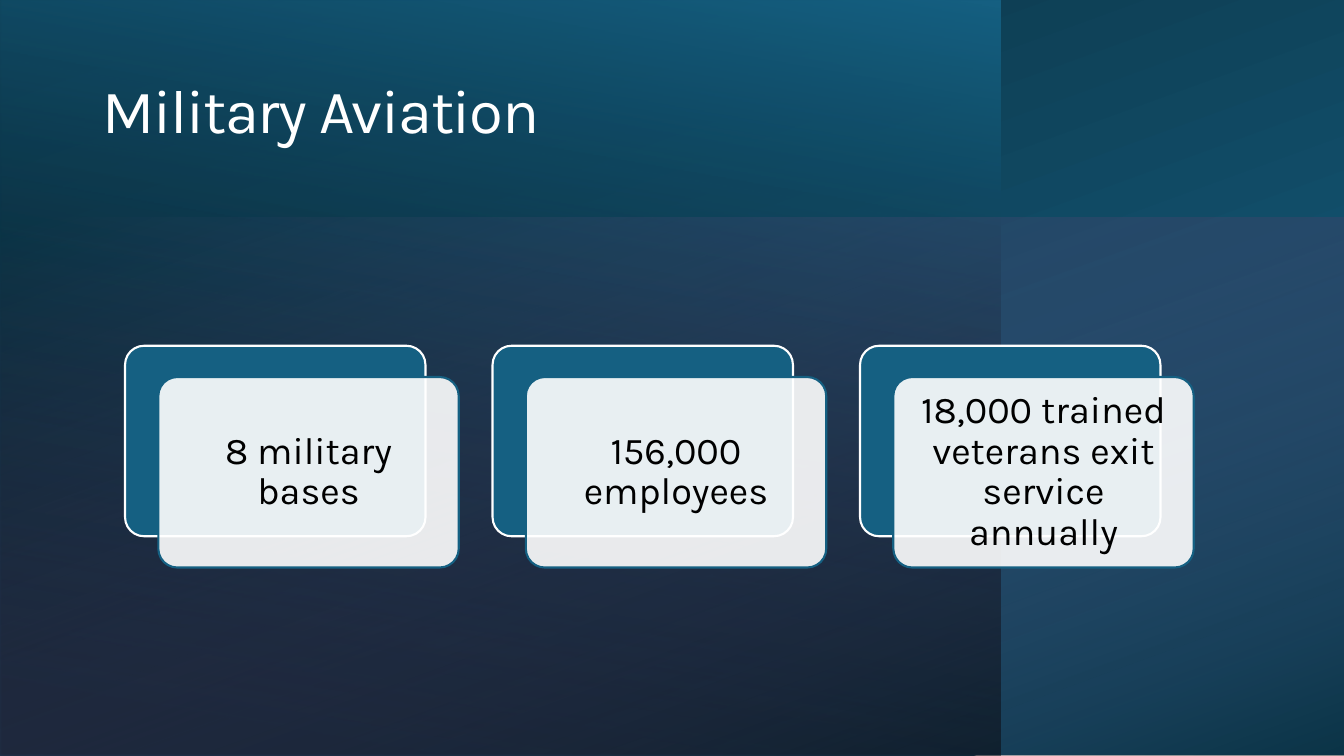
from lxml import etree
from pptx import Presentation
from pptx.dml.color import RGBColor
from pptx.enum.shapes import MSO_SHAPE as Preset
from pptx.enum.text import MSO_ANCHOR as Anchor, PP_ALIGN as Align
from pptx.oxml.ns import qn
from pptx.util import Inches, Pt

COLORS = {
    "teal": "156082",
    "deep_teal": "0B3041",
    "orchid": "D86ECC",
    "black": "000000",
    "white": "FFFFFF",
}
FONT = "Karla"

# Box (left, top, width, height), rotation, angle, stops (position, color, opacity)
BACKDROP = [
    ((2.92, -2.92, 7.5, 13.33), 270, 200, [(8, "teal", 100), (100, "deep_teal", 100)]),
    ((0, 0, 9.92, 7.5), 180, 80, [(8, "black", 52), (100, "teal", 100)]),
    ((3.99, -1.84, 5.35, 13.34), 270, 20, [(0, "orchid", 0), (100, "black", 46)]),
]

FACTS = [
    "8 military bases",
    "156,000 employees",
    "18,000 trained veterans exit service annually",
]
CARD_LEFT, CARD_TOP, CARD_PITCH = 1.24, 3.43, 3.645
CARD_SIZE = (2.98, 1.89)
FRONT_SHIFT = (0.33, 0.31)
CARD_INSET = 0.17


def rgb(name):
    return RGBColor.from_string(COLORS[name])


def set_opacity(color_element, percent):
    if percent < 100:
        alpha = etree.SubElement(color_element, qn("a:alpha"))
        alpha.set("val", str(percent * 1000))


def add_panel(slide, box, rotation, angle, stops):
    """Add a mirrored rectangle with a two-stop gradient; angle runs clockwise."""
    panel = slide.shapes.add_shape(Preset.RECTANGLE, *map(Inches, box))
    panel.shadow.inherit = False
    panel.rotation = rotation
    panel.element.spPr.find(qn("a:xfrm")).set("flipH", "1")
    panel.line.fill.background()
    panel.fill.gradient()
    panel.fill.gradient_angle = 360 - angle
    for stop, (position, color, _) in zip(panel.fill.gradient_stops, stops):
        stop.position = position / 100
        stop.color.rgb = rgb(color)
    color_elements = list(panel.element.spPr.iter(qn("a:srgbClr")))
    for color_element, (_, _, opacity) in zip(color_elements, stops):
        set_opacity(color_element, opacity)


def add_rounded_box(slide, left, top, fill, line, opacity=100):
    box = slide.shapes.add_shape(
        Preset.ROUNDED_RECTANGLE, *map(Inches, (left, top, *CARD_SIZE))
    )
    box.adjustments[0] = 0.1
    box.shadow.inherit = False
    box.fill.solid()
    box.fill.fore_color.rgb = rgb(fill)
    set_opacity(box.element.spPr.find(".//" + qn("a:srgbClr")), opacity)
    box.line.color.rgb = rgb(line)
    box.line.width = Pt(1.5)
    return box


def write_text(shape, text, size, color, align, spacing=None):
    frame = shape.text_frame
    frame.word_wrap = True
    frame.vertical_anchor = Anchor.MIDDLE
    paragraph = frame.paragraphs[0]
    paragraph.alignment = align
    paragraph.line_spacing = 0.9
    run = paragraph.add_run()
    run.text = text
    for name, value in {"name": FONT, "size": Pt(size)}.items():
        setattr(run.font, name, value)
    run.font.color.rgb = rgb(color)
    if spacing is not None:
        run.font.element.set("spc", str(spacing)) if hasattr(
            run.font, "element"
        ) else paragraph.runs[0]._r.get_or_add_rPr().set("spc", str(spacing))


def add_fact_card(slide, left, text):
    add_rounded_box(slide, left, CARD_TOP, "teal", "white")
    shift_x, shift_y = FRONT_SHIFT
    front = add_rounded_box(
        slide, left + shift_x, CARD_TOP + shift_y, "white", "teal", opacity=90
    )
    for side in ("left", "top", "right", "bottom"):
        setattr(front.text_frame, f"margin_{side}", Inches(CARD_INSET))
    write_text(front, text, 27, "black", Align.CENTER)


def add_title(slide, text):
    title = slide.shapes.add_textbox(*map(Inches, (0.92, 0.4, 11.5, 1.45)))
    write_text(title, text, 44, "white", Align.LEFT, spacing=-100)


def main():
    presentation = Presentation()
    presentation.slide_width = Inches(13.33)
    presentation.slide_height = Inches(7.5)
    slide = presentation.slides.add_slide(presentation.slide_layouts[6])

    for panel in BACKDROP:
        add_panel(slide, *panel)
    for index, fact in enumerate(FACTS):
        add_fact_card(slide, CARD_LEFT + index * CARD_PITCH, fact)
    add_title(slide, "Military Aviation")

    presentation.save("out.pptx")


if __name__ == "__main__":
    main()
